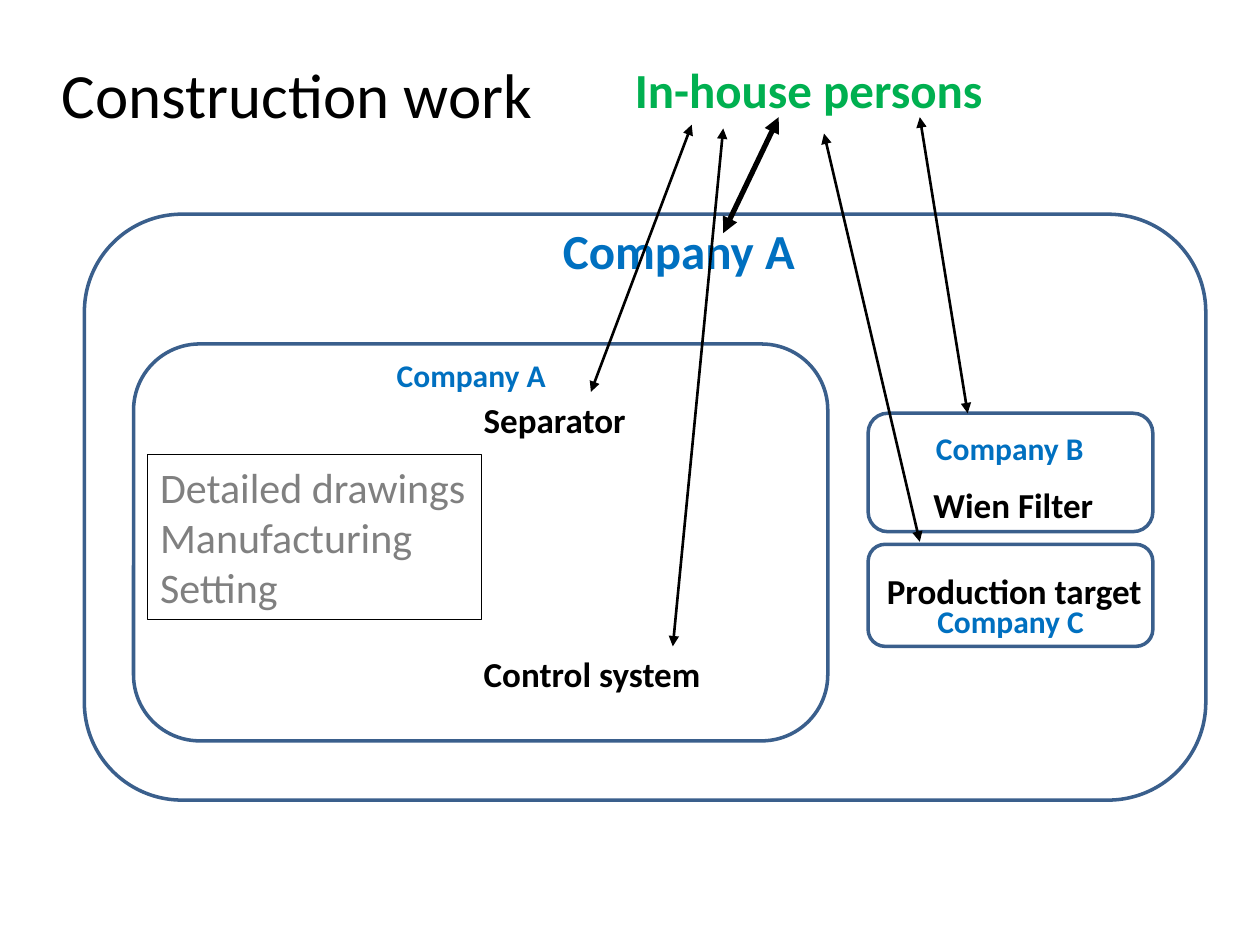
from lxml.etree import SubElement
from pptx import Presentation
from pptx.dml.color import RGBColor
from pptx.enum.shapes import MSO_CONNECTOR, MSO_SHAPE
from pptx.enum.text import MSO_ANCHOR, MSO_AUTO_SIZE, PP_ALIGN
from pptx.oxml.ns import qn
from pptx.util import Inches, Pt

FONT = "Calibri"
COLORS = {
    "black": "000000",
    "task": "808080",
    "company": "0070C0",
    "in_house": "00B050",
    "outline": "3A5F8C",
}


def color(name):
    """Return the palette colour of that name."""
    return RGBColor.from_string(COLORS[name])


def place(element, left, top, width, height):
    """Move and size an element, in inches."""
    element.left, element.top = Inches(left), Inches(top)
    element.width, element.height = Inches(width), Inches(height)


def write(frame, lines, size, color_name, bold=False):
    """Fill a text frame with one left-aligned paragraph per line."""
    frame.word_wrap = False
    frame.auto_size = MSO_AUTO_SIZE.NONE
    frame.vertical_anchor = MSO_ANCHOR.TOP
    for index, line in enumerate(lines):
        paragraph = frame.paragraphs[0] if index == 0 else frame.add_paragraph()
        paragraph.alignment = PP_ALIGN.LEFT
        paragraph.space_before = Pt(0)
        run = paragraph.add_run()
        run.text = line
        run.font.name = FONT
        run.font.size = Pt(size)
        run.font.bold = bold
        run.font.color.rgb = color(color_name)


def add_label(slide, text, bounds, size, color_name):
    """Add a bold one-line label."""
    label = slide.shapes.add_textbox(*map(Inches, bounds))
    write(label.text_frame, [text], size, color_name, bold=True)


def add_scope(slide, bounds):
    """Add a rounded outline around a company's share of the work."""
    scope = slide.shapes.add_shape(MSO_SHAPE.ROUNDED_RECTANGLE, *map(Inches, bounds))
    scope.shadow.inherit = False
    scope.fill.background()
    scope.line.color.rgb = color("outline")
    scope.line.width = Pt(2)


def add_contact(slide, start, end, weight):
    """Add a double-headed arrow between in-house persons and a partner."""
    contact = slide.shapes.add_connector(
        MSO_CONNECTOR.STRAIGHT, *map(Inches, start + end)
    )
    contact.line.color.rgb = color("black")
    contact.line.width = Pt(weight)
    line = contact.line._get_or_add_ln()
    for tip in ("a:headEnd", "a:tailEnd"):
        SubElement(line, qn(tip), type="triangle")
    SubElement(contact._element.spPr, qn("a:effectLst"))


def fill_tasks(body, tasks):
    """Turn the body placeholder into a framed list without bullets."""
    place(body, 1.17, 3.61, 2.65, 1.31)
    body.line.color.rgb = color("black")
    body.line.width = Pt(0.75)
    write(body.text_frame, tasks, 24, "task")
    for paragraph in body.text_frame.paragraphs:
        properties = paragraph._p.get_or_add_pPr()
        properties.set("marL", "0")
        properties.set("indent", "0")
        SubElement(properties, qn("a:buNone"))


def main():
    """Build the construction work slide."""
    deck = Presentation()
    deck.slide_width, deck.slide_height = Inches(10), Inches(7.5)
    slide = deck.slides.add_slide(deck.slide_layouts[1])

    title = slide.shapes.title
    place(title, 0.39, 0.39, 3.97, 0.71)
    write(title.text_frame, ["Construction work"], 36, "black")
    fill_tasks(
        slide.placeholders[1], ["Detailed drawings", "Manufacturing", "Setting"]
    )

    components = [
        ("Separator", 3.74, 1.32),
        ("Wien Filter", 7.31, 1.47),
        ("Production target", 6.94, 2.22),
        ("Control system", 3.74, 1.92),
    ]
    component_top, component_step = 3.11, 0.68
    for row, (name, left, width) in enumerate(components):
        top = component_top + row * component_step
        if row == 3:
            top = 5.13
        add_label(slide, name, (left, top, width, 0.44), 20, "black")

    for bounds in (
        (1.06, 2.73, 5.51, 3.15),
        (6.89, 3.28, 2.26, 0.94),
        (6.89, 4.32, 2.26, 0.81),
        (0.67, 1.7, 8.9, 4.65),
    ):
        add_scope(slide, bounds)

    for name, left, top in (
        ("Company A", 3.05, 2.78),
        ("Company C", 7.34, 4.73),
        ("Company B", 7.33, 3.36),
    ):
        add_label(slide, name, (left, top, 1.39, 0.4), 18, "company")
    add_label(slide, "Company A", (4.37, 1.7, 2.06, 0.57), 28, "company")
    add_label(slide, "In-house persons", (4.94, 0.42, 2.99, 0.57), 28, "in_house")

    for start, end, weight in (
        ((6.18, 0.93), (5.74, 1.85), 3),
        ((6.54, 1.06), (7.3, 4.3), 1.5),
        ((7.3, 0.93), (7.68, 3.28), 1.5),
        ((5.49, 0.99), (4.69, 3.11), 1.5),
        ((5.74, 1.02), (5.34, 5.13), 1.5),
    ):
        add_contact(slide, start, end, weight)

    deck.save("out.pptx")


if __name__ == "__main__":
    main()
